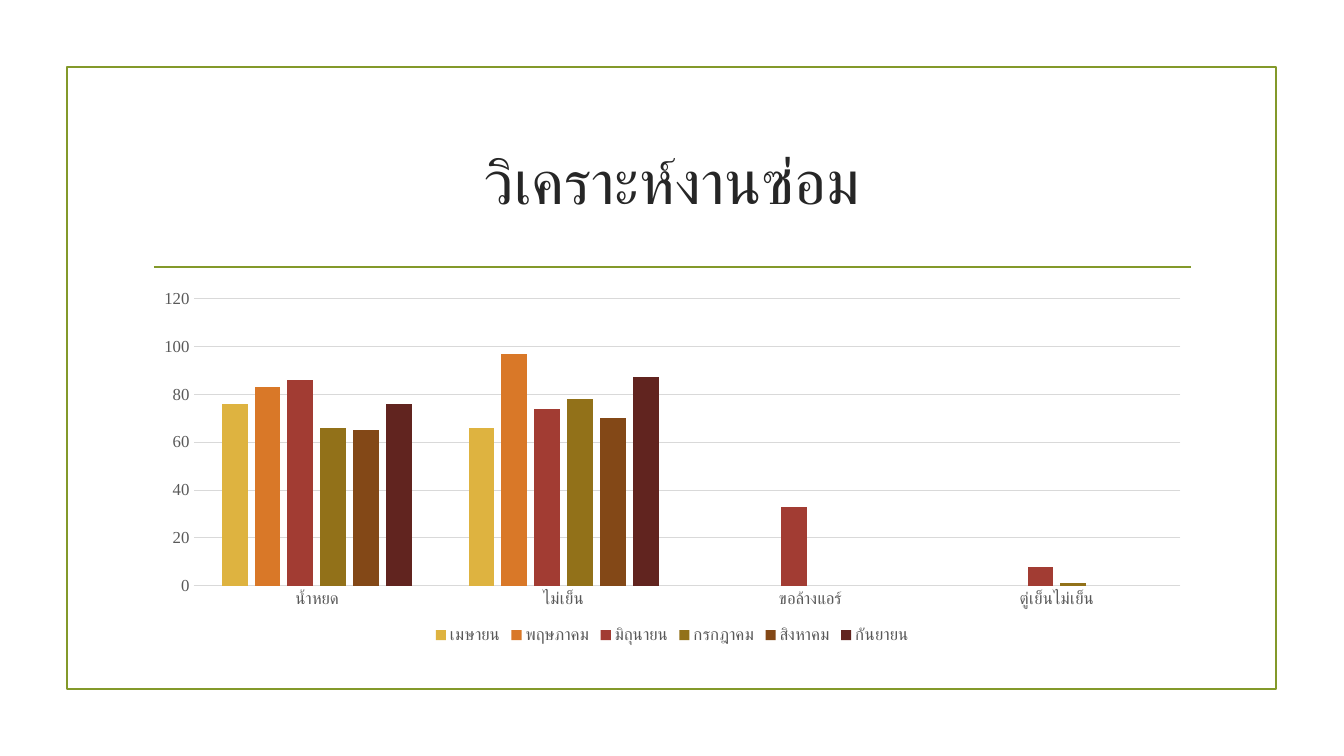
"""Build the slide that charts monthly repair jobs by fault type."""
import pptx
import pptx.chart.data
import pptx.dml.color
import pptx.enum.chart
import pptx.enum.shapes
import pptx.enum.text
import pptx.oxml.ns
import pptx.util
from lxml import etree

Pt = pptx.util.Pt
HEADING = "วิเคราะห์งานซ่อม"
FAULTS = ["น้ำหยด", "ไม่เย็น", "ขอล้างแอร์", "ตู่เย็นไม่เย็น"]
MONTHS = [
    ("เมษายน", "DEB340", (76, 66, None, None)),
    ("พฤษภาคม", "D97828", (83, 97, None, None)),
    ("มิถุนายน", "A23C33", (86, 74, 33, 8)),
    ("กรกฎาคม", "927119", (66, 78, None, 1)),
    ("สิงหาคม", "834817", (65, 70, None, None)),
    ("กันยายน", "61241F", (76, 87, None, None)),
]
COLORS = {"green": "83992A", "heading": "262626", "label": "595959", "grid": "D9D9D9"}
FONT = "Times New Roman"
LEFT, WIDTH = 102.24, 756


def rgb(name):
    return pptx.dml.color.RGBColor.from_string(COLORS.get(name, name))


def style_font(font, size, color):
    font.name, font.size = FONT, Pt(size)
    font.color.rgb = rgb(color)


def style_line(line, color, width):
    line.color.rgb = rgb(color)
    line.width = Pt(width)


def add_thai_face(element):
    for latin in list(element.iter(pptx.oxml.ns.qn("a:latin"))):
        thai = etree.Element(pptx.oxml.ns.qn("a:cs"), typeface=FONT)
        latin.addnext(thai)


def add_frame(slide):
    frame = slide.shapes.add_shape(
        pptx.enum.shapes.MSO_SHAPE.RECTANGLE, Pt(47.7), Pt(48), Pt(864), Pt(444.2))
    frame.shadow.inherit = False
    frame.fill.background()
    style_line(frame.line, "green", 1.25)
    rule = slide.shapes.add_connector(
        pptx.enum.shapes.MSO_CONNECTOR.STRAIGHT, Pt(110), Pt(190.8), Pt(850.5), Pt(190.8))
    style_line(rule.line, "green", 1.25)
    etree.SubElement(rule.element.spPr, pptx.oxml.ns.qn("a:effectLst"))


def add_heading(slide):
    title = slide.shapes.title
    title.left, title.top, title.width, title.height = Pt(LEFT), Pt(77), Pt(WIDTH), Pt(103)
    title.text_frame.vertical_anchor = pptx.enum.text.MSO_ANCHOR.MIDDLE
    paragraph = title.text_frame.paragraphs[0]
    paragraph.alignment = pptx.enum.text.PP_ALIGN.CENTER
    run = paragraph.add_run()
    run.text = HEADING
    style_font(run.font, 44, "heading")
    add_thai_face(title.element)


def add_repairs_chart(slide):
    repairs = pptx.chart.data.CategoryChartData(number_format="General")
    repairs.categories = FAULTS
    for month, _, counts in MONTHS:
        repairs.add_series(month, counts)
    chart = slide.shapes.add_chart(
        pptx.enum.chart.XL_CHART_TYPE.COLUMN_CLUSTERED,
        Pt(LEFT), Pt(201.6), Pt(WIDTH), Pt(261.4), repairs).chart
    chart.has_title = False
    style_font(chart.font, 10, "000000")
    plot = chart.plots[0]
    plot.gap_width, plot.overlap, plot.vary_by_categories = 219, -27, False
    for series, (_, color, _) in zip(plot.series, MONTHS):
        series.format.fill.solid()
        series.format.fill.fore_color.rgb = rgb(color)
        series.invert_if_negative = False

    for axis in (chart.category_axis, chart.value_axis):
        axis.major_tick_mark = axis.minor_tick_mark = pptx.enum.chart.XL_TICK_MARK.NONE
        style_font(axis.tick_labels.font, 12, "label")
    style_line(chart.category_axis.format.line, "grid", 0.75)
    counts_axis = chart.value_axis
    counts_axis.minimum_scale, counts_axis.maximum_scale, counts_axis.major_unit = 0, 120, 20
    counts_axis.format.line.fill.background()
    style_line(counts_axis.major_gridlines.format.line, "grid", 0.75)

    chart.has_legend = True
    chart.legend.position = pptx.enum.chart.XL_LEGEND_POSITION.BOTTOM
    chart.legend.include_in_layout = False
    style_font(chart.legend.font, 12, "label")
    add_thai_face(chart.element)


def main():
    deck = pptx.Presentation()
    deck.slide_width, deck.slide_height = Pt(960), Pt(540)
    slide = deck.slides.add_slide(deck.slide_layouts[5])
    add_frame(slide)
    add_heading(slide)
    add_repairs_chart(slide)
    deck.save("out.pptx")


if __name__ == "__main__":
    main()
